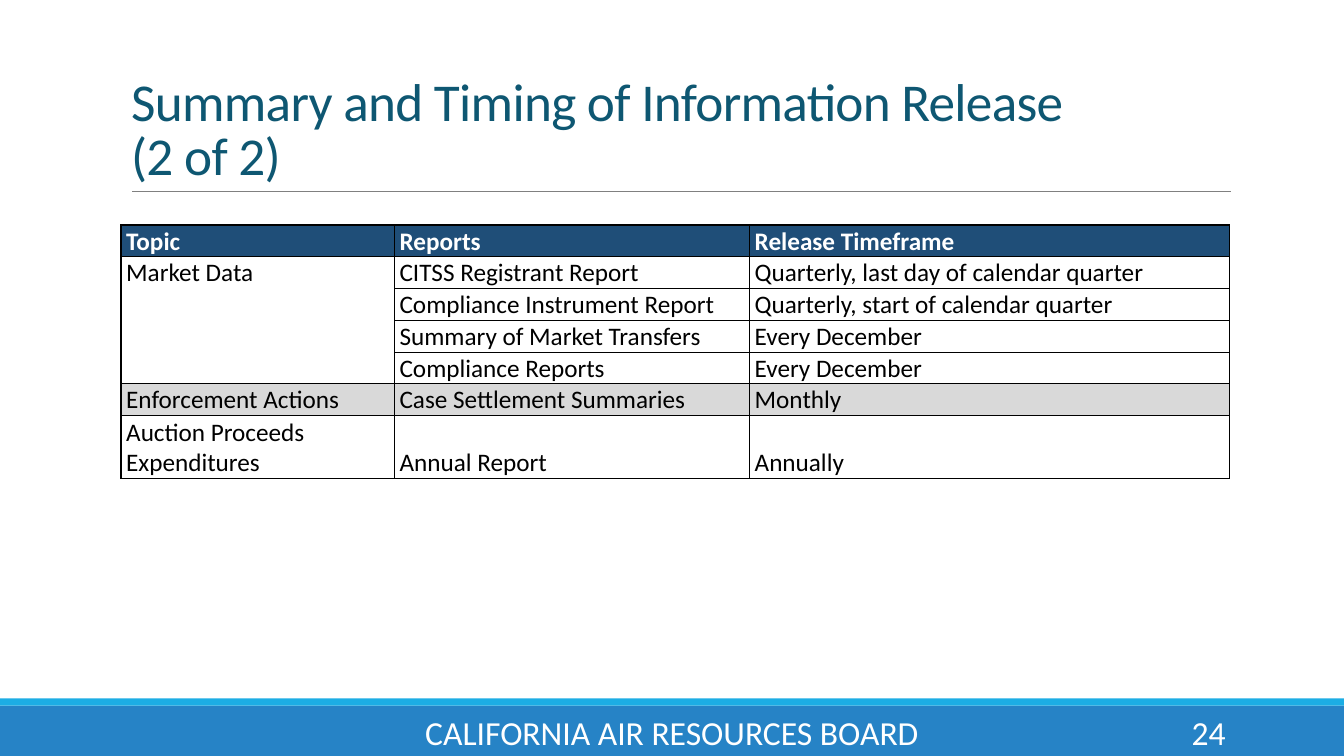
from lxml.etree import SubElement
from pptx import Presentation
from pptx.dml.color import RGBColor
from pptx.enum.shapes import MSO_CONNECTOR, MSO_SHAPE
from pptx.enum.text import MSO_ANCHOR, MSO_AUTO_SIZE, PP_ALIGN
from pptx.oxml import parse_xml
from pptx.oxml.ns import nsdecls, qn
from pptx.util import Cm, Pt

COLORS = {
    "title": "0E5772", "rule": "808080", "footer": "2683C6", "accent": "1CADE4",
    "header": "1F4E78", "band": "D9D9D9", "white": "FFFFFF", "black": "000000",
}
FONT = "Calibri"
ROWS = [
    ("Topic", "Reports", "Release Timeframe"),
    ("Market Data", "CITSS Registrant Report", "Quarterly, last day of calendar quarter"),
    ("", "Compliance Instrument Report", "Quarterly, start of calendar quarter"),
    ("", "Summary of Market Transfers", "Every December"),
    ("", "Compliance Reports", "Every December"),
    ("Enforcement Actions", "Case Settlement Summaries", "Monthly"),
    ("Auction Proceeds Expenditures", "Annual Report", "Annually"),
]
COL_WIDTHS = [6.89, 8.95, 12.1]
ROW_HEIGHTS = [0.8] * 6 + [1.59]
ROW_FILLS = {0: "header", 5: "band"}


def rgb(name):
    """Return the named colour."""
    return RGBColor.from_string(COLORS[name])


def style(p, size, color, align=PP_ALIGN.LEFT, bold=False):
    """Format a whole paragraph."""
    p.alignment = align
    p.font.name = FONT
    p.font.size = Pt(size)
    p.font.bold = bold
    p.font.color.rgb = rgb(color)


def add_bar(s, top, height, color):
    """Add a full-width bar."""
    sp = s.shapes.add_shape(MSO_SHAPE.RECTANGLE, 0, Cm(top), Cm(33.87), Cm(height))
    sp.shadow.inherit = False
    sp.fill.solid()
    sp.fill.fore_color.rgb = rgb(color)
    sp.line.fill.background()


def add_rule(s, left, right, y):
    """Add the thin line below the title."""
    line = s.shapes.add_connector(MSO_CONNECTOR.STRAIGHT, Cm(left), Cm(y), Cm(right), Cm(y))
    line.line.color.rgb = rgb("rule")
    line.line.width = Pt(0.5)
    SubElement(line._element.spPr, qn("a:effectLst"))


def add_footer_text(s, text, left, width, align):
    """Add a text in the footer bar."""
    sp = s.shapes.add_textbox(Cm(left), Cm(17.93), Cm(width), Cm(1.02))
    tf = sp.text_frame
    tf.word_wrap = True
    tf.vertical_anchor = MSO_ANCHOR.MIDDLE
    tf.text = text
    style(tf.paragraphs[0], 24, "white", align)


def format_title(s, text):
    """Fill, place and format the title placeholder."""
    sp = s.shapes.title
    sp.left, sp.top, sp.width, sp.height = Cm(3.05), Cm(0.79), Cm(27.94), Cm(4.04)
    tf = sp.text_frame
    tf.text = text
    tf.word_wrap = True
    tf.auto_size = MSO_AUTO_SIZE.NONE
    tf.vertical_anchor = MSO_ANCHOR.BOTTOM
    p = tf.paragraphs[0]
    p.line_spacing = 0.85
    style(p, 38, "title")
    for r in p.runs:
        r._r.get_or_add_rPr().set("spc", "-50")


def set_borders(cell, widths):
    """Draw left, right, top and bottom borders, with 0 for none."""
    tc_pr = cell._tc.get_or_add_tcPr()
    for i, (side, width) in enumerate(zip("LRTB", widths)):
        fill = f'<a:solidFill><a:srgbClr val="{COLORS["black"]}"/></a:solidFill>' if width else "<a:noFill/>"
        tc_pr.insert(i, parse_xml(f'<a:ln{side} {nsdecls("a")} w="{Pt(width)}">{fill}</a:ln{side}>'))


def format_cell(cell, text, row, col):
    """Fill and format one table cell."""
    cell.text = text
    cell.vertical_anchor = MSO_ANCHOR.BOTTOM
    cell.margin_left, cell.margin_right = Cm(0.13), Cm(0.03)
    cell.margin_top, cell.margin_bottom = Cm(0.03), 0
    style(cell.text_frame.paragraphs[0], 18, "black" if row else "white", bold=row == 0)
    if row in ROW_FILLS:
        cell.fill.solid()
        cell.fill.fore_color.rgb = rgb(ROW_FILLS[row])
    else:
        cell.fill.background()
    last_row, last_col = len(ROWS) - 1, len(COL_WIDTHS) - 1
    top = 1 if row == 0 else 0.5 if text else 0
    if row == last_row:
        bottom = 1
    else:
        bottom = 0.5 if ROWS[row + 1][col] else 0
    set_borders(cell, (0.5 if col else 1, 1 if col == last_col else 0.5, top, bottom))


def add_release_table(s):
    """Add the table of reports and release times."""
    frame = s.shapes.add_table(len(ROWS), len(COL_WIDTHS), Cm(3.05), Cm(5.67),
                               Cm(sum(COL_WIDTHS)), Cm(sum(ROW_HEIGHTS)))
    table = frame.table
    table.horz_banding = False
    for column, width in zip(table.columns, COL_WIDTHS):
        column.width = Cm(width)
    for i, (row, height) in enumerate(zip(table.rows, ROW_HEIGHTS)):
        row.height = Cm(height)
        for j, text in enumerate(ROWS[i]):
            format_cell(table.cell(i, j), text, i, j)


def main():
    """Build the slide and save it."""
    prs = Presentation()
    prs.slide_width, prs.slide_height = Cm(33.87), Cm(19.05)
    s = prs.slides.add_slide(prs.slide_layouts[5])
    add_bar(s, 17.78, 1.27, "footer")
    add_bar(s, 17.6, 0.18, "accent")
    add_rule(s, 3.33, 31.01, 4.83)
    add_footer_text(s, "CALIFORNIA AIR RESOURCES BOARD", 10.24, 13.39, PP_ALIGN.CENTER)
    add_footer_text(s, "24", 27.51, 3.63, PP_ALIGN.RIGHT)
    format_title(s, "Summary and Timing of Information Release\v(2 of 2)")
    add_release_table(s)
    prs.save("out.pptx")


if __name__ == "__main__":
    main()
